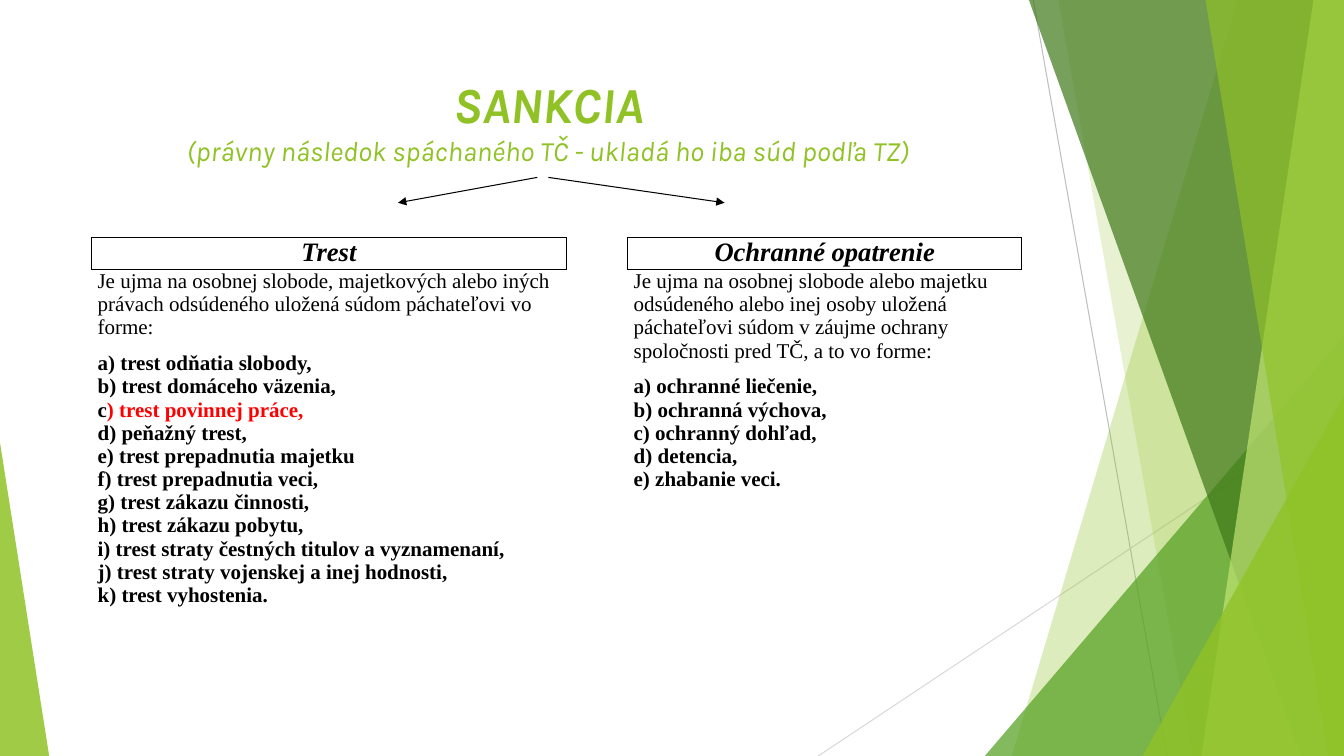
"""Build the slide on criminal sanctions: punishments and protective measures."""
from dataclasses import dataclass

import lxml.etree
import pptx
import pptx.dml.color
import pptx.enum.shapes
import pptx.enum.text
import pptx.oxml.ns
import pptx.util

Cm = pptx.util.Cm
Pt = pptx.util.Pt
qn = pptx.oxml.ns.qn

COLORS = {
    "lime": "90C226", "green": "54A021", "forest": "3F7819", "pale": "C0E474",
    "black": "000000", "red": "FF0000", "gray": "BFBFBF", "silver": "D9D9D9",
}
WIDTH, HEIGHT = 33.87, 19.05
SERIF = "Times New Roman"


@dataclass
class Facet:
    """Panel with a slanted left edge that reaches the right side of the slide."""
    top_x: float
    bottom_x: float
    color: str
    opacity: int


@dataclass
class Wedge:
    """Right triangle standing on the bottom edge."""
    left: float
    top: float
    width: float
    apex: int
    color: str
    opacity: int


@dataclass
class Line:
    """Straight line, with an arrowhead if wanted."""
    start: tuple[float, float]
    end: tuple[float, float]
    color: str
    arrow: bool = False


@dataclass
class Sanction:
    """Table column with a heading, a definition and a list of forms."""
    column: int
    heading: str
    definition: str
    forms: list[str]
    highlighted: int = -1


PANELS = [
    Facet(31.19, 25.5, "lime", 30),
    Facet(26.67, 30.05, "lime", 20),
    Wedge(24.82, 8.46, 9.05, 1, "green", 72),
    Facet(25.93, 32.79, "forest", 70),
    Facet(33.1, 30.28, "pale", 70),
    Facet(30.38, 33.48, "lime", 65),
    Wedge(28.8, 9.98, 5.07, 1, "lime", 80),
    Wedge(0, 11.15, 1.24, 0, "lime", 85),
]
BACK_LINES = [
    Line((26.04, 0), (29.41, HEIGHT), "gray"),
    Line((WIDTH, 10.24), (20.62, HEIGHT), "silver"),
]
ARROWS = [
    Line((13.82, 4.47), (18.26, 5.11), "black", True),
    Line((13.54, 4.47), (10.03, 5.11), "black", True),
]
SANCTIONS = [
    Sanction(
        0, "Trest",
        "Je ujma na osobnej slobode, majetkových alebo iných právach odsúdeného "
        "uložená súdom páchateľovi vo forme:",
        ["a) trest odňatia slobody,", "b) trest domáceho väzenia,",
         "c) trest povinnej práce,", "d) peňažný trest,",
         "e) trest prepadnutia majetku", "f) trest prepadnutia veci,",
         "g) trest zákazu činnosti,", "h) trest zákazu pobytu,",
         "i) trest straty čestných titulov a vyznamenaní,",
         "j) trest straty vojenskej a inej hodnosti,", "k) trest vyhostenia."],
        highlighted=2),
    Sanction(
        2, "Ochranné opatrenie",
        "Je ujma na osobnej slobode alebo majetku odsúdeného alebo inej osoby "
        "uložená páchateľovi súdom v záujme ochrany spoločnosti pred TČ, "
        "a to vo forme:",
        ["a) ochranné liečenie,", "b) ochranná výchova,", "c) ochranný dohľad,",
         "d) detencia,", "e) zhabanie veci."]),
]
BORDERS = [["LRTB", "LR", "LRTB"], ["T", "", "T"]]


def rgb(name: str) -> pptx.dml.color.RGBColor:
    return pptx.dml.color.RGBColor.from_string(COLORS[name])


def style(span, size: float, font: str, color: str = "black",
          bold: bool = False, italic: bool = False) -> None:
    span.font.size, span.font.name = Pt(size), font
    span.font.bold, span.font.italic = bold, italic
    span.font.color.rgb = rgb(color)


def draw_panel(page, panel: Facet | Wedge) -> None:
    if isinstance(panel, Facet):
        builder = page.shapes.build_freeform(Cm(panel.top_x), 0)
        builder.add_line_segments([
            (Cm(WIDTH), 0), (Cm(WIDTH), Cm(HEIGHT)), (Cm(panel.bottom_x), Cm(HEIGHT))])
        shape = builder.convert_to_shape()
    else:
        shape = page.shapes.add_shape(
            pptx.enum.shapes.MSO_SHAPE.ISOSCELES_TRIANGLE, Cm(panel.left),
            Cm(panel.top), Cm(panel.width), Cm(HEIGHT - panel.top))
        shape.adjustments[0] = panel.apex
    shape.shadow.inherit = False
    shape.line.fill.background()
    shape.fill.solid()
    shape.fill.fore_color.rgb = rgb(panel.color)
    color = shape.fill._xPr.find(qn("a:solidFill"))[0]
    lxml.etree.SubElement(color, qn("a:alpha"), val=str(panel.opacity * 1000))


def draw_line(page, line: Line) -> None:
    connector = page.shapes.add_connector(
        pptx.enum.shapes.MSO_CONNECTOR.STRAIGHT,
        *(Cm(value) for value in line.start + line.end))
    connector.line.width = Pt(0.75)
    connector.line.color.rgb = rgb(line.color)
    if line.arrow:
        outline = connector.line._get_or_add_ln()
        lxml.etree.SubElement(outline, qn("a:tailEnd"), type="triangle")
    lxml.etree.SubElement(connector._element.spPr, qn("a:effectLst"))


def draw_title(page) -> None:
    box = page.shapes.add_textbox(Cm(1.88), Cm(1.7), Cm(23.88), Cm(2.67))
    frame = box.text_frame
    frame.word_wrap = True
    frame.vertical_anchor = pptx.enum.text.MSO_ANCHOR.MIDDLE
    frame.text = "SANKCIA\v(právny následok spáchaného TČ - ukladá ho iba súd podľa TZ)"
    para = frame.paragraphs[0]
    para.alignment = pptx.enum.text.PP_ALIGN.CENTER
    heading, subtitle = para.runs
    style(heading, 36, "Karla", "lime", bold=True, italic=True)
    style(subtitle, 20, "Karla", "lime", italic=True)


def format_cell(cell, borders: str) -> None:
    properties = cell._tc.get_or_add_tcPr()
    for side in "LRTB":
        edge = lxml.etree.SubElement(properties, qn(f"a:ln{side}"), w=str(Pt(1)))
        if side in borders:
            fill = lxml.etree.SubElement(edge, qn("a:solidFill"))
            lxml.etree.SubElement(fill, qn("a:srgbClr"), val=COLORS["black"])
        else:
            lxml.etree.SubElement(edge, qn("a:noFill"))
    cell.fill.background()
    cell.margin_left = cell.margin_right = Cm(0.15)
    cell.margin_top = cell.margin_bottom = 0
    cell.text_frame.paragraphs[0].font.size = Pt(15)


def fill_column(table, sanction: Sanction) -> None:
    para = table.cell(0, sanction.column).text_frame.paragraphs[0]
    para.text = sanction.heading
    para.alignment = pptx.enum.text.PP_ALIGN.CENTER
    style(para.runs[0], 19, SERIF, bold=True, italic=True)

    frame = table.cell(1, sanction.column).text_frame
    frame.text = sanction.definition
    style(frame.paragraphs[0].runs[0], 15, SERIF)
    para = frame.add_paragraph()
    para.space_before = Pt(9)
    for index, form in enumerate(sanction.forms):
        if index:
            para.add_line_break()
        parts = [(form, "black")]
        if index == sanction.highlighted:
            parts = [(form[0], "black"), (form[1:], "red")]
        for text, color in parts:
            span = para.add_run()
            span.text = text
            style(span, 15, SERIF, color, bold=True)


def draw_table(page) -> None:
    table = page.shapes.add_table(2, 3, Cm(2.31), Cm(5.99), Cm(23.44), Cm(10.79)).table
    table.first_row = table.horz_banding = False
    for column, width in zip(table.columns, (11.96, 1.55, 9.93)):
        column.width = Cm(width)
    for row, height, borders in zip(table.rows, (0.81, 9.98), BORDERS):
        row.height = Cm(height)
        for cell, sides in zip(row.cells, borders):
            format_cell(cell, sides)
    for sanction in SANCTIONS:
        fill_column(table, sanction)


def main() -> None:
    deck = pptx.Presentation()
    deck.slide_width, deck.slide_height = Cm(WIDTH), Cm(HEIGHT)
    page = deck.slides.add_slide(deck.slide_layouts[6])
    for line in BACK_LINES:
        draw_line(page, line)
    for panel in PANELS:
        draw_panel(page, panel)
    draw_title(page)
    draw_table(page)
    for arrow in ARROWS:
        draw_line(page, arrow)
    deck.save("out.pptx")


if __name__ == "__main__":
    main()
